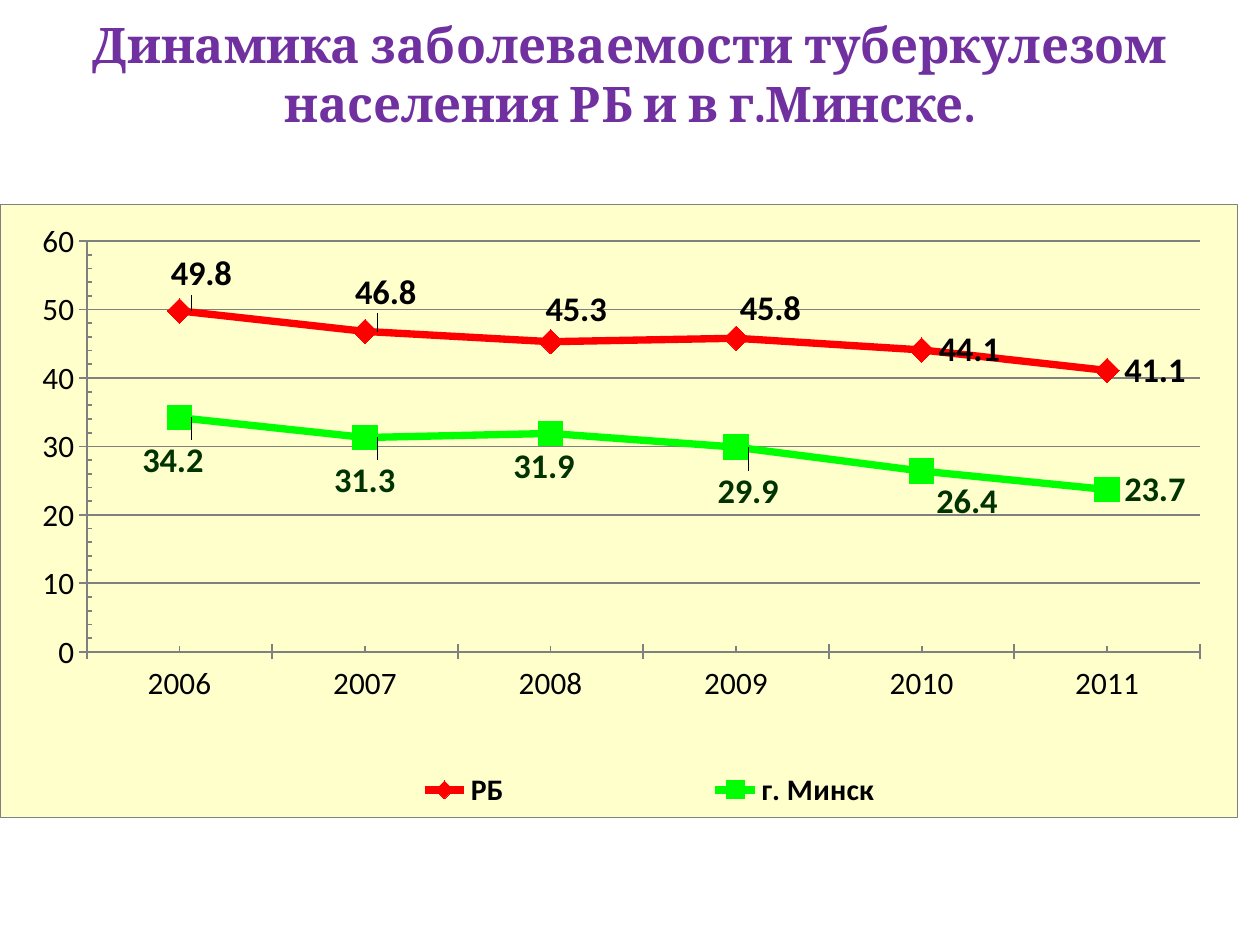
from lxml import etree
from pptx import Presentation
from pptx import util as u
from pptx.chart.data import CategoryChartData
from pptx.dml.color import RGBColor
from pptx.enum import chart as charts, text
from pptx.oxml import parse_xml
from pptx.oxml.ns import nsdecls, qn


class Theme:
    title_font, chart_font = "Cambria", "Calibri"
    title_size, axis_size, legend_size, label_size = 28, 17.8, 17, 19.7
    purple, black, dark_green = "7030A0", "000000", "003300"
    red, green, cream, gray = "FF0000", "00FF00", "FFFFCC", "808080"


YEARS = ["2006", "2007", "2008", "2009", "2010", "2011"]
# Label shifts are percentages of the chart's width and height
SERIES = [
    dict(name="РБ", values=[49.8, 46.8, 45.3, 45.8, 44.1, 41.1],
         color=Theme.red, label_color=Theme.black,
         marker=charts.XL_MARKER_STYLE.DIAMOND,
         shifts=[(-2.1, -6), (-2.2, -6.4), (-1.8, -5.2), (-1.1, -4.9)]),
    dict(name="г. Минск", values=[34.2, 31.3, 31.9, 29.9, 26.4, 23.7],
         color=Theme.green, label_color=Theme.dark_green,
         marker=charts.XL_MARKER_STYLE.SQUARE,
         shifts=[(-4.4, 7), (-3.9, 7), (-4.4, 5.5), (-2.9, 7.2), (-0.2, 5)]),
]


def style_font(font, name, size, color, bold=False):
    font.name, font.size, font.bold = name, u.Pt(size), bold
    font.color.rgb = RGBColor.from_string(color)


def style_line(line, color, width):
    line.color.rgb = RGBColor.from_string(color)
    line.width = u.Pt(width)


def fill_solid(fill, color):
    fill.solid()
    fill.fore_color.rgb = RGBColor.from_string(color)


def manual_layout(x, y, width=None, height=None, inner=False):
    """Layout element; with a size it is a fixed box, without one a shift."""
    parts = [("layoutTarget", "inner")] if inner else []
    if width is not None:
        parts += [("xMode", "edge"), ("yMode", "edge")]
    parts += [("x", x), ("y", y)]
    if width is not None:
        parts += [("w", width), ("h", height)]
    body = "".join(f'<c:{tag} val="{value}"/>' for tag, value in parts)
    return parse_xml(f'<c:layout {nsdecls("c")}><c:manualLayout>{body}'
                     '</c:manualLayout></c:layout>')


def replace_layout(parent, layout, index):
    for old in parent.findall(qn("c:layout")):
        parent.remove(old)
    parent.insert(index, layout)


def add_title(slide, left, top, width, height):
    box = slide.shapes.add_textbox(left, top, width, height)
    frame = box.text_frame
    frame.word_wrap = True
    frame.vertical_anchor = text.MSO_ANCHOR.MIDDLE
    frame.margin_top, frame.margin_bottom = 0, u.Inches(0.39)
    frame.text = "Динамика заболеваемости туберкулезом\vнаселения РБ и в г.Минске."
    paragraph = frame.paragraphs[0]
    paragraph.alignment = text.PP_ALIGN.CENTER
    for run in paragraph.runs:
        style_font(run.font, Theme.title_font, Theme.title_size, Theme.purple, True)


def style_series(series, entry):
    series.smooth = False
    style_line(series.format.line, entry["color"], 4.19)
    series.marker.style, series.marker.size = entry["marker"], 14
    fill_solid(series.marker.format.fill, entry["color"])
    style_line(series.marker.format.line, entry["color"], 0.75)

    labels = series.data_labels
    labels.show_value = True
    labels.position = charts.XL_LABEL_POSITION.RIGHT
    style_font(labels.font, Theme.chart_font, Theme.label_size,
               entry["label_color"], True)
    for index, (x, y) in enumerate(entry["shifts"]):
        label = series.points[index].data_label
        style_font(label.font, Theme.chart_font, Theme.label_size,
                   entry["label_color"], True)
        label.position = charts.XL_LABEL_POSITION.RIGHT
    for element, (x, y) in zip(labels._element.findall(qn("c:dLbl")), entry["shifts"]):
        replace_layout(element, manual_layout(x / 100, y / 100), 1)


def style_axes(chart):
    value_axis, category_axis = chart.value_axis, chart.category_axis
    value_axis.minimum_scale, value_axis.maximum_scale = 0, 60
    value_axis.major_unit, value_axis.minor_unit = 10, 2
    value_axis.has_major_gridlines = True
    style_line(value_axis.major_gridlines.format.line, Theme.gray, 1)
    value_axis.major_tick_mark = charts.XL_TICK_MARK.CROSS
    value_axis.minor_tick_mark = charts.XL_TICK_MARK.INSIDE
    category_axis.major_tick_mark = charts.XL_TICK_MARK.CROSS
    category_axis.minor_tick_mark = charts.XL_TICK_MARK.INSIDE
    for axis in (value_axis, category_axis):
        style_line(axis.format.line, Theme.gray, 1)
        style_font(axis.tick_labels.font, Theme.chart_font,
                   Theme.axis_size, Theme.black)


def style_chart_area(chart):
    area = parse_xml(
        f'<c:spPr {nsdecls("c", "a")}><a:solidFill><a:srgbClr val="{Theme.cream}"/>'
        f'</a:solidFill><a:ln w="{u.Pt(0.25)}"><a:solidFill>'
        f'<a:srgbClr val="{Theme.gray}"/></a:solidFill></a:ln></c:spPr>')
    chart._chartSpace.chart.addnext(area)


def add_incidence_chart(slide, left, top, width, height):
    data = CategoryChartData()
    data.categories = YEARS
    for entry in SERIES:
        data.add_series(entry["name"], entry["values"])
    chart = slide.shapes.add_chart(charts.XL_CHART_TYPE.LINE_MARKERS,
                                   left, top, width, height, data).chart
    chart.has_title = False
    style_font(chart.font, Theme.chart_font, Theme.axis_size, Theme.black)
    chart.plots[0].vary_by_categories = False
    style_chart_area(chart)
    style_axes(chart)
    for series, entry in zip(chart.plots[0].series, SERIES):
        style_series(series, entry)

    # Legend below the plot
    chart.has_legend = True
    legend = chart.legend
    legend.position = charts.XL_LEGEND_POSITION.RIGHT
    legend.include_in_layout = False
    style_font(legend.font, Theme.chart_font, Theme.legend_size, Theme.black, True)
    replace_layout(legend._element, manual_layout(0.18, 0.92, 0.69, 0.07), 1)

    # Plot area
    plot_area = chart._chartSpace.chart.plotArea
    replace_layout(plot_area, manual_layout(0.07, 0.06, 0.9, 0.67, inner=True), 0)


def main():
    presentation = Presentation()
    presentation.slide_width, presentation.slide_height = u.Inches(10), u.Inches(7.5)
    slide = presentation.slides.add_slide(presentation.slide_layouts[6])
    add_title(slide, u.Inches(0), u.Inches(0.16), u.Inches(10), u.Inches(1.23))
    add_incidence_chart(slide, u.Inches(0), u.Inches(1.62),
                        u.Inches(9.82), u.Inches(4.87))
    presentation.save("out.pptx")


if __name__ == "__main__":
    main()
